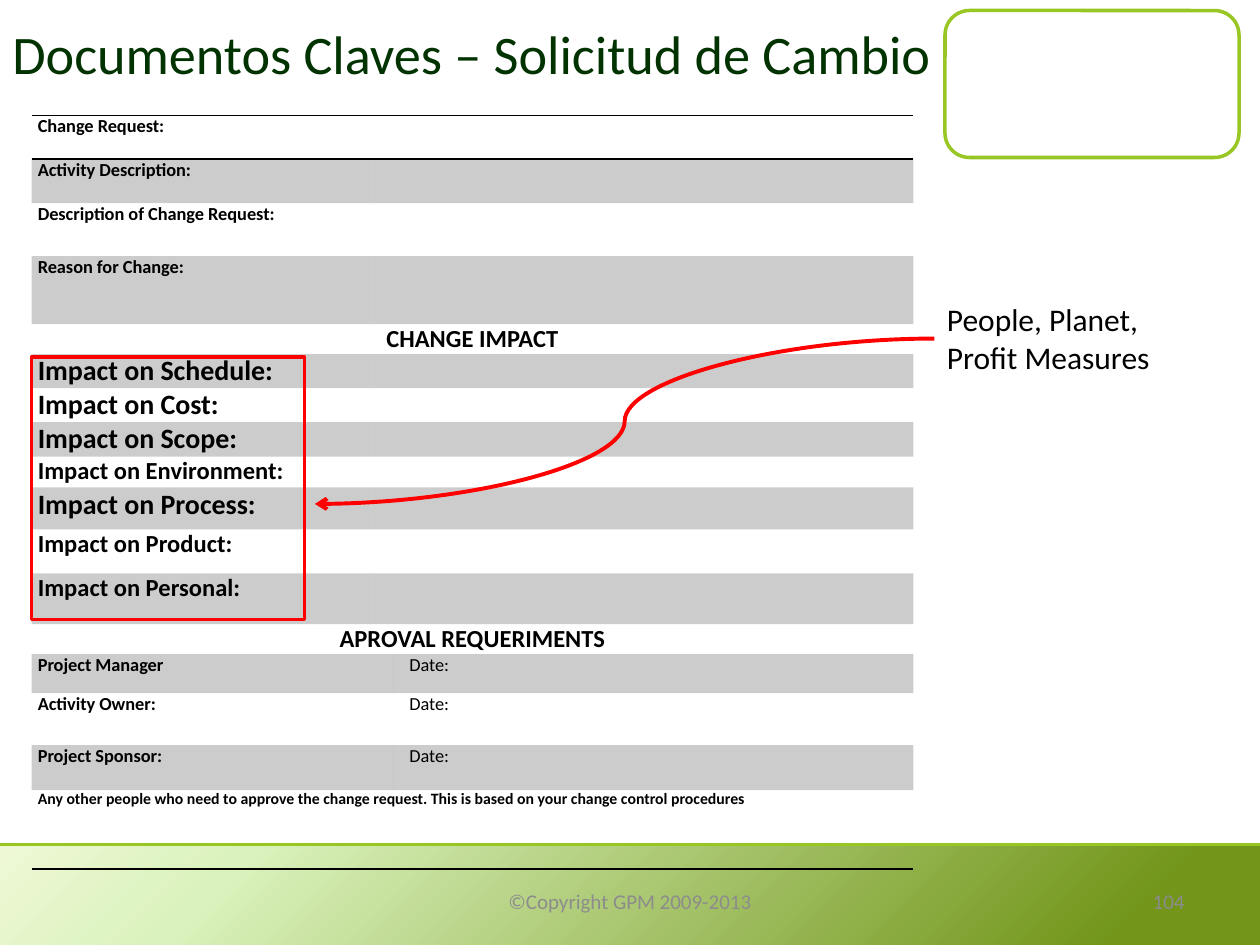
from lxml.etree import SubElement
from pptx import Presentation
from pptx.dml.color import RGBColor
from pptx.enum.shapes import MSO_CONNECTOR, MSO_SHAPE
from pptx.enum.text import MSO_ANCHOR, PP_ALIGN
from pptx.oxml import parse_xml
from pptx.oxml.ns import nsdecls, qn
from pptx.util import Pt


def color(value):
    return RGBColor.from_string(value)


def write(frame, text, size, ink="000000", bold=False, align=PP_ALIGN.LEFT):
    frame.word_wrap = True
    para = frame.paragraphs[0]
    para.text = text
    para.alignment = align
    para.font.name = "Calibri"
    para.font.size = Pt(size)
    para.font.bold = bold
    para.font.color.rgb = color(ink)


deck = Presentation()
deck.slide_width, deck.slide_height = Pt(720), Pt(540)
page = deck.slides.add_slide(deck.slide_layouts[6])

frame = page.shapes.add_shape(MSO_SHAPE.ROUNDED_RECTANGLE, Pt(540), Pt(6), Pt(168), Pt(84))
frame.shadow.inherit = False
frame.fill.solid()
frame.fill.fore_color.rgb = color("FFFFFF")
frame.line.color.rgb = color("98C723")
frame.line.width = Pt(2)

band = page.shapes.add_shape(MSO_SHAPE.RECTANGLE, 0, Pt(483), Pt(720), Pt(57))
band.shadow.inherit = False
band.line.fill.background()
band.fill.gradient()
band.fill.gradient_angle = 315
stops = band._element.spPr.find(qn("a:gradFill")).find(qn("a:gsLst"))
for stop in list(stops):
    stops.remove(stop)
for position, shade in [(0, "EEF8D5"), (19, "DAF2BC"), (89, "72951A")]:
    stop = SubElement(stops, qn("a:gs"), pos=str(position * 1000))
    SubElement(stop, qn("a:srgbClr"), val=shade)

edge = page.shapes.add_connector(MSO_CONNECTOR.STRAIGHT, 0, Pt(482.4), Pt(720), Pt(482.4))
edge.line.color.rgb = color("98C723")
edge.line.width = Pt(1.5)
SubElement(edge._element.spPr, qn("a:effectLst"))

labels = [
    (0, 0, 540, 60, "Documentos Claves – Solicitud de Cambio", 31, "003300", PP_ALIGN.LEFT, MSO_ANCHOR.MIDDLE),
    (534, 168, 132, 51, "People, Planet, Profit Measures", 18, "000000", PP_ALIGN.LEFT, MSO_ANCHOR.TOP),
    (246, 500.4, 228, 28.8, "©Copyright GPM 2009-2013", 12, "8C8C8C", PP_ALIGN.CENTER, MSO_ANCHOR.MIDDLE),
    (516, 500.4, 168, 28.8, "104", 12, "8C8C8C", PP_ALIGN.RIGHT, MSO_ANCHOR.MIDDLE),
]
for left, top, width, height, text, size, ink, align, anchor in labels:
    box = page.shapes.add_textbox(Pt(left), Pt(top), Pt(width), Pt(height))
    box.text_frame.vertical_anchor = anchor
    write(box.text_frame, text, size, ink, align=align)

rows = [
    ("Change Request:", 10.5, 25.1, "field"),
    ("Activity Description:", 10.5, 25.1, "field"),
    ("Description of Change Request:", 10.5, 30.3, "field"),
    ("Reason for Change:", 10.5, 38.9, "field"),
    ("CHANGE IMPACT", 14, 17.1, "heading"),
    ("Impact on Schedule:", 16, 19.5, "field"),
    ("Impact on Cost:", 16, 19.5, "field"),
    ("Impact on Scope:", 16, 19.6, "field"),
    ("Impact on Environment:", 14, 17.7, "field"),
    ("Impact on Process:", 16, 24, "field"),
    ("Impact on Product:", 14, 25.1, "field"),
    ("Impact on Personal:", 14, 29.1, "field"),
    ("APROVAL REQUERIMENTS", 14, 17.1, "heading"),
    ("Project Manager", 10.5, 22.3, "approval"),
    ("Activity Owner:", 10.5, 29.7, "approval"),
    ("Project Sponsor:", 10.5, 25.7, "approval"),
    ("Any other people who need to approve the change request. "
     "This is based on your change control procedures", 9, 45.1, "note"),
]
merges = {"field": (1, 2), "heading": (0, 2), "approval": (0, 1), "note": (0, 2)}
borders = {0: ["lnB", "lnT"], len(rows) - 1: ["lnB"]}

holder = page.shapes.add_table(len(rows), 3, Pt(18), Pt(65.9), Pt(504), Pt(sum(row[2] for row in rows)))
table = holder.table
table.first_row = table.horz_banding = False
table._tbl.tblPr.find(qn("a:tableStyleId")).text = "{2D5ABB26-0587-4C30-8999-92F81FD0307C}"
for column, width in zip(table.columns, [194.4, 12.2, 297.4]):
    column.width = Pt(width)

for index, (text, size, height, kind) in enumerate(rows):
    table.rows[index].height = Pt(height)
    first, last = merges[kind]
    table.cell(index, first).merge(table.cell(index, last))
    texts = [text, "", "Date:" if kind == "approval" else ""]
    for position, words in enumerate(texts):
        cell = table.cell(index, position)
        cell.margin_left = Pt(9.4 if words == "Date:" else 3.6)
        cell.margin_right = Pt(3.6)
        cell.margin_top = cell.margin_bottom = 0
        if words:
            align = PP_ALIGN.CENTER if kind == "heading" else PP_ALIGN.LEFT
            write(cell.text_frame, words, size, bold=position == 0, align=align)
        else:
            SubElement(cell.text_frame.paragraphs[0]._p, qn("a:endParaRPr"), sz="900")
        if index % 2:
            cell.fill.solid()
            cell.fill.fore_color.rgb = color("000000")
            shade = cell._tc.tcPr.find(qn("a:solidFill")).find(qn("a:srgbClr"))
            SubElement(shade, qn("a:alpha"), val="20000")
        else:
            cell.fill.background()
        for side in borders.get(index, []):
            cell._tc.tcPr.insert(0, parse_xml(
                f'<a:{side} {nsdecls("a")} w="12700"><a:solidFill>'
                f'<a:srgbClr val="000000"/></a:solidFill></a:{side}>'))

highlight = page.shapes.add_shape(MSO_SHAPE.RECTANGLE, Pt(18), Pt(204), Pt(156), Pt(150))
highlight.shadow.inherit = False
highlight.fill.background()
highlight.line.color.rgb = color("FF0000")
highlight.line.width = Pt(2)

arrow = page.shapes.add_connector(MSO_CONNECTOR.CURVE, Pt(534), Pt(193.5), Pt(180), Pt(288))
arrow.line.color.rgb = color("FF0000")
arrow.line.width = Pt(2.25)
SubElement(arrow.line._get_or_add_ln(), qn("a:tailEnd"), type="arrow")
SubElement(arrow._element.spPr, qn("a:effectLst"))

deck.save("out.pptx")
